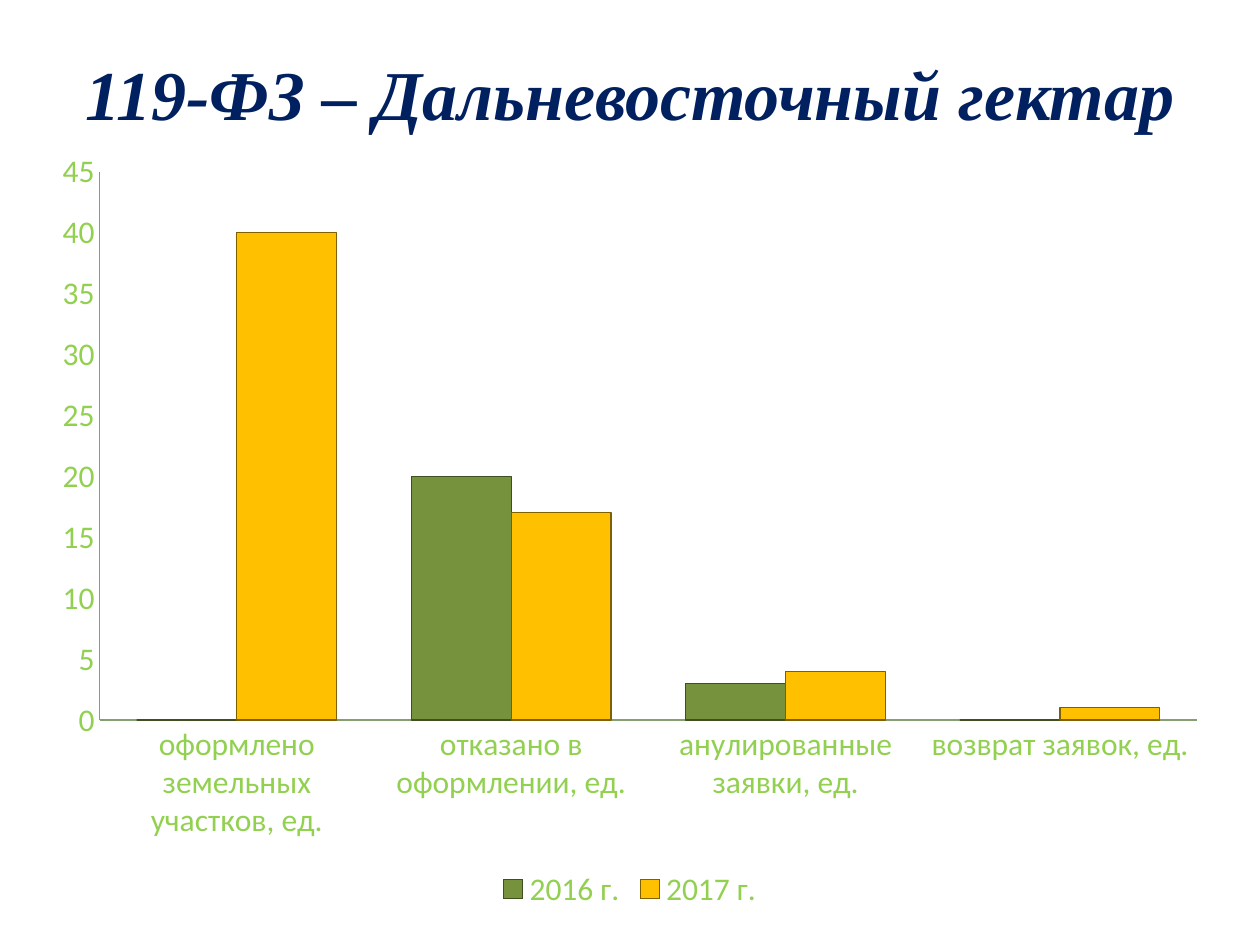
"""Build a slide with a clustered column chart of Far Eastern hectare applications."""
from pptx import Presentation
from pptx.chart.data import CategoryChartData
from pptx.dml.color import RGBColor
from pptx.enum.chart import XL_CHART_TYPE, XL_LEGEND_POSITION, XL_TICK_MARK
from pptx.enum.text import MSO_ANCHOR, PP_ALIGN
from pptx.util import Inches, Pt

TITLE = "119-ФЗ – Дальневосточный гектар"
CATEGORIES = [
    "оформлено земельных участков, ед.",
    "отказано в оформлении, ед.",
    "анулированные заявки, ед.",
    "возврат заявок, ед.",
]
SERIES = [
    ("2016 г.", (0, 20, 3, 0), "green", "dark_green"),
    ("2017 г.", (40, 17, 4, 1), "amber", "dark_amber"),
]
COLORS = {
    "title": "002060",
    "label": "92D050",
    "axis": "84A070",
    "green": "76923C",
    "dark_green": "3F4F20",
    "amber": "FFC000",
    "dark_amber": "7F6000",
}
WIDTH, HEIGHT = Inches(10), Inches(7.5)
TITLE_SHARES = (0.05, 0.04, 0.9, 0.116)
CHART_SHARES = (0.031, 0.145, 0.938, 0.823)


def color(name):
    return RGBColor.from_string(COLORS[name])


def place(shares):
    return [int(share * size) for share, size in zip(shares, (WIDTH, HEIGHT) * 2)]


def style_font(font, name, size, color_name):
    font.name = name
    font.size = Pt(size)
    font.color.rgb = color(color_name)


def add_title(slide):
    frame = slide.shapes.add_textbox(*place(TITLE_SHARES)).text_frame
    frame.word_wrap = True
    frame.vertical_anchor = MSO_ANCHOR.MIDDLE
    paragraph = frame.paragraphs[0]
    paragraph.alignment = PP_ALIGN.CENTER
    run = paragraph.add_run()
    run.text = TITLE
    style_font(run.font, "Times New Roman", 40, "title")
    run.font.bold = run.font.italic = True


def add_column_chart(slide):
    data = CategoryChartData()
    data.categories = CATEGORIES
    for name, values, *_ in SERIES:
        data.add_series(name, values)
    chart = slide.shapes.add_chart(
        XL_CHART_TYPE.COLUMN_CLUSTERED, *place(CHART_SHARES), data
    ).chart
    style_font(chart.font, "Calibri", 18, "label")
    chart.has_title = False
    chart.has_legend = True
    chart.legend.position = XL_LEGEND_POSITION.BOTTOM
    chart.legend.include_in_layout = False

    for axis in (chart.category_axis, chart.value_axis):
        axis.has_major_gridlines = False
        axis.major_tick_mark = axis.minor_tick_mark = XL_TICK_MARK.NONE
        axis.format.line.color.rgb = color("axis")
        axis.format.line.width = Pt(0.75)
    chart.value_axis.minimum_scale = 0
    chart.value_axis.maximum_scale = 45
    chart.value_axis.major_unit = 5

    plot = chart.plots[0]
    plot.gap_width = 75
    plot.overlap = 0
    plot.vary_by_categories = False
    for series, (_, _, fill, outline) in zip(plot.series, SERIES):
        series.invert_if_negative = False
        series.format.fill.solid()
        series.format.fill.fore_color.rgb = color(fill)
        series.format.line.color.rgb = color(outline)
        series.format.line.width = Pt(0.75)


def main():
    presentation = Presentation()
    presentation.slide_width, presentation.slide_height = WIDTH, HEIGHT
    slide = presentation.slides.add_slide(presentation.slide_layouts[6])
    add_column_chart(slide)
    add_title(slide)
    presentation.save("out.pptx")


if __name__ == "__main__":
    main()
